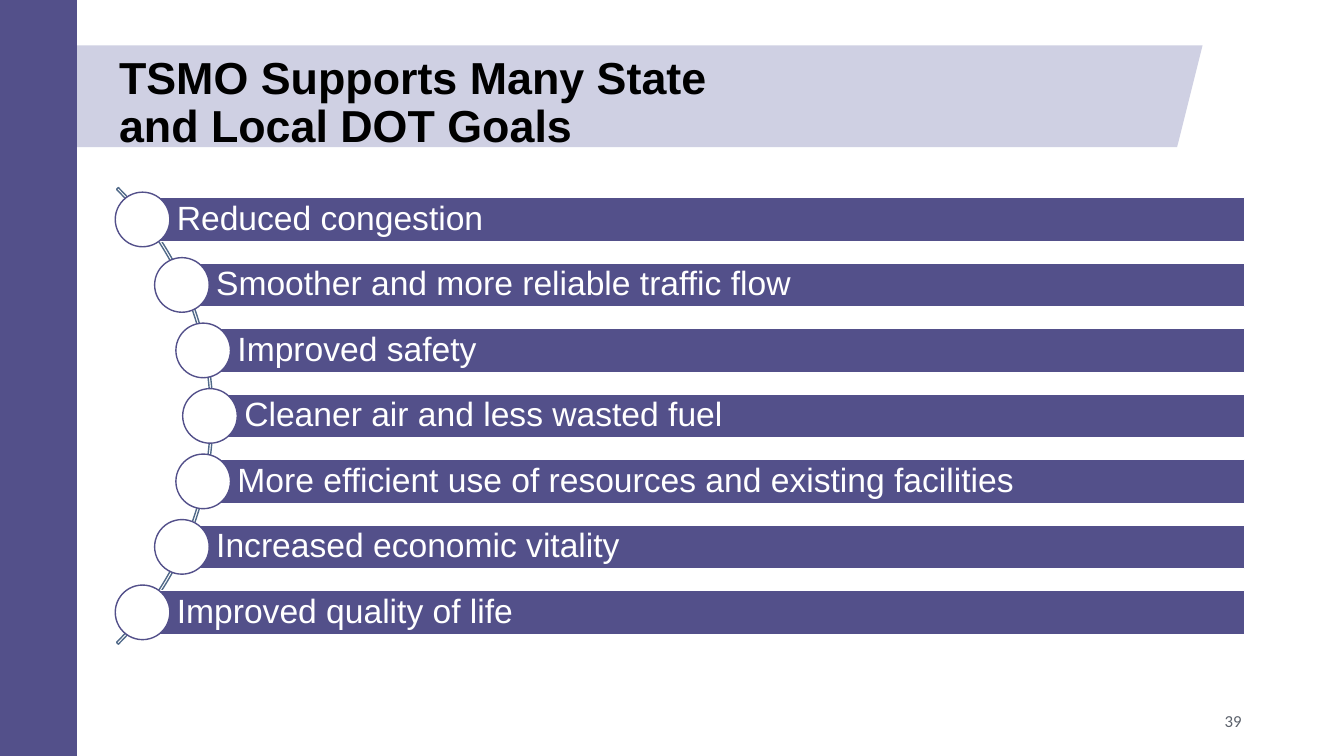
from math import sqrt
from pptx import Presentation
from pptx.dml.color import RGBColor
from pptx.enum.shapes import MSO_SHAPE
from pptx.enum.text import MSO_ANCHOR, MSO_AUTO_SIZE, PP_ALIGN
from pptx.util import Pt

PURPLE = RGBColor(0x53, 0x50, 0x8A)
LILAC = RGBColor(0xCF, 0xD0, 0xE3)
SLATE = RGBColor(0x51, 0x6A, 0x89)
GRAY = RGBColor(0x5B, 0x61, 0x6B)
WHITE = RGBColor(0xFF, 0xFF, 0xFF)
BLACK = RGBColor(0, 0, 0)

TITLE = "TSMO Supports Many State \vand Local DOT Goals"
GOALS = [
    "Reduced congestion",
    "Smoother and more reliable traffic flow",
    "Improved safety",
    "Cleaner air and less wasted fuel",
    "More efficient use of resources and existing facilities",
    "Increased economic vitality",
    "Improved quality of life",
]

HEAD = {"name": "Arial", "size": Pt(32), "bold": True}
GOAL = {"name": "Arial", "size": Pt(24)}
PAGE = {"name": "Calibri", "size": Pt(12)}
TOP = {"vertical_anchor": MSO_ANCHOR.TOP, "auto_size": MSO_AUTO_SIZE.NONE,
       "word_wrap": True}
MID = {**TOP, "vertical_anchor": MSO_ANCHOR.MIDDLE}
INSET = {"margin_left": Pt(24.5), "margin_right": Pt(5),
         "margin_top": Pt(5), "margin_bottom": Pt(5)}
LEFT = {"alignment": PP_ALIGN.LEFT, "line_spacing": 0.9}
RIGHT = {"alignment": PP_ALIGN.RIGHT}


def apply(item, form):
    for key, value in form.items():
        setattr(item, key, value)


def write(shape, text, frame, para, font, color):
    shape.text_frame.text = text
    apply(shape.text_frame, frame)
    first = shape.text_frame.paragraphs[0]
    apply(first, para)
    apply(first.font, font)
    first.font.color.rgb = color


def draw(slide, kind, box, fill=None, line=None):
    shape = slide.shapes.add_shape(kind, *map(Pt, box))
    shape.shadow.inherit = False
    if fill is None:
        shape.fill.background()
    else:
        shape.fill.solid()
        shape.fill.fore_color.rgb = fill
    if line is None:
        shape.line.fill.background()
    else:
        shape.line.color.rgb = line
        shape.line.width = Pt(1)
    return shape


def banner(slide, box):
    left, top, wide, high = box
    draw(slide, MSO_SHAPE.PARALLELOGRAM, box, LILAC)
    draw(slide, MSO_SHAPE.RECTANGLE, (0, 0, 54.9, 540), PURPLE)
    title = slide.shapes.title
    title.element.getparent().append(title.element)
    spot = left + 60.5, top + 3.6, wide - 133.2, high - 33.1
    apply(title, dict(zip(("left", "top", "width", "height"), map(Pt, spot))))
    write(title, TITLE, TOP, LEFT, HEAD, BLACK)


def goals(slide, box):
    left, top, wide, high = box
    step, bar, dot = high / len(GOALS), 31.2, 39
    mid, hub, reach, arc = top + high / 2, left - 160.5, 228.5, 230.6
    curve = draw(slide, MSO_SHAPE.BLOCK_ARC,
                 (hub - arc, mid - arc, 2 * arc, 2 * arc), line=SLATE)
    for spot, value in enumerate((189, 27, 0.004)):
        curve.adjustments[spot] = value
    for row, text in enumerate(GOALS):
        y = top + (row + 0.5) * step
        x = hub + sqrt(reach ** 2 - (y - mid) ** 2)
        strip = draw(slide, MSO_SHAPE.RECTANGLE,
                     (x, y - bar / 2, left + wide - x, bar), PURPLE, WHITE)
        write(strip, text, {**MID, **INSET}, LEFT, GOAL, WHITE)
        draw(slide, MSO_SHAPE.OVAL,
             (x - dot / 2, y - dot / 2, dot, dot), WHITE, PURPLE)


def number(slide, box):
    label = slide.shapes.add_textbox(*map(Pt, box))
    write(label, "39", MID, RIGHT, PAGE, GRAY)


def main():
    deck = Presentation()
    apply(deck, {"slide_width": Pt(960), "slide_height": Pt(540)})
    slide = deck.slides.add_slide(deck.slide_layouts[5])
    banner(slide, (17.3, 32.4, 841.7, 72.7))
    goals(slide, (82, 133.4, 807.2, 327.4))
    number(slide, (678, 500.4, 216, 28.8))
    deck.save("out.pptx")


if __name__ == "__main__":
    main()
